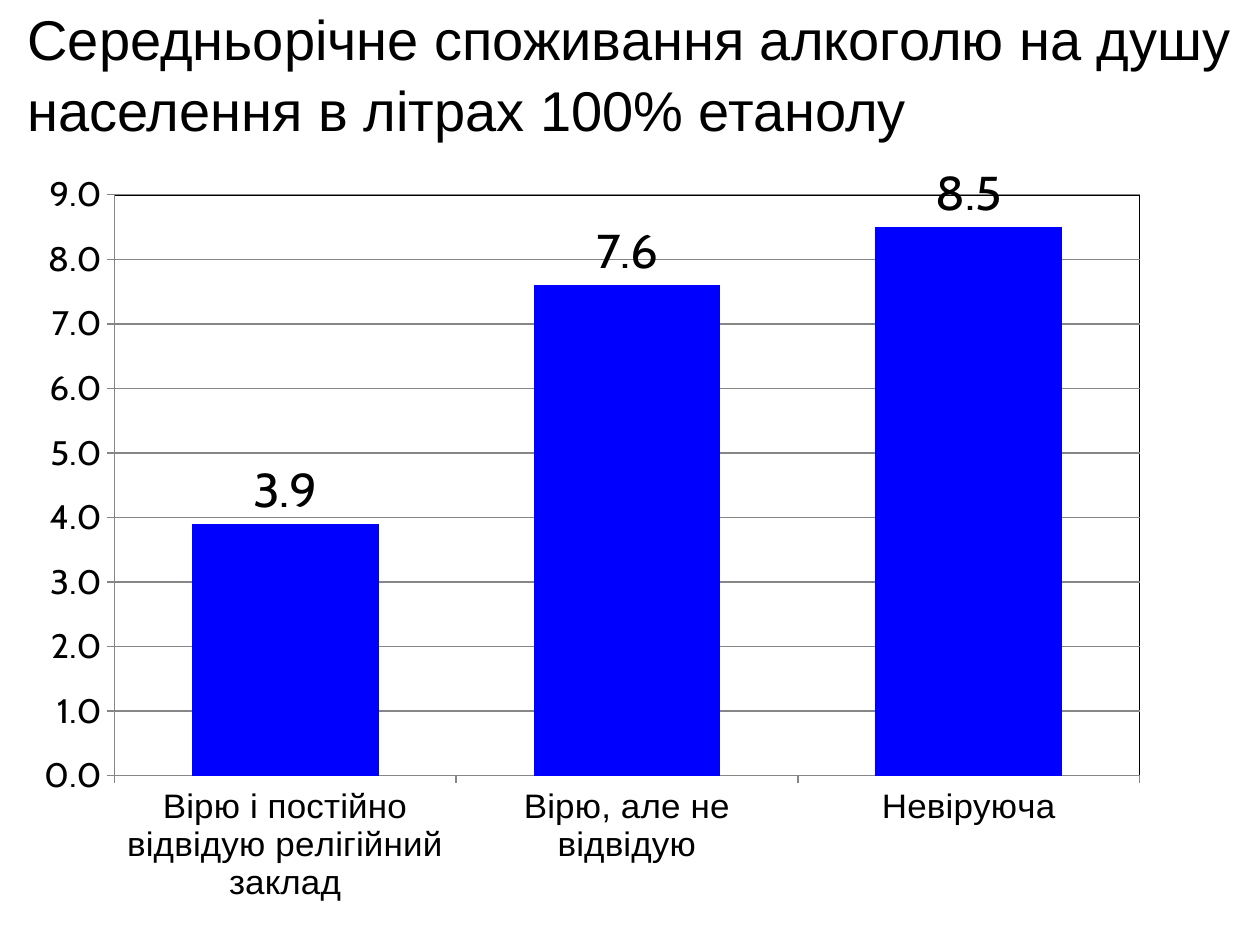
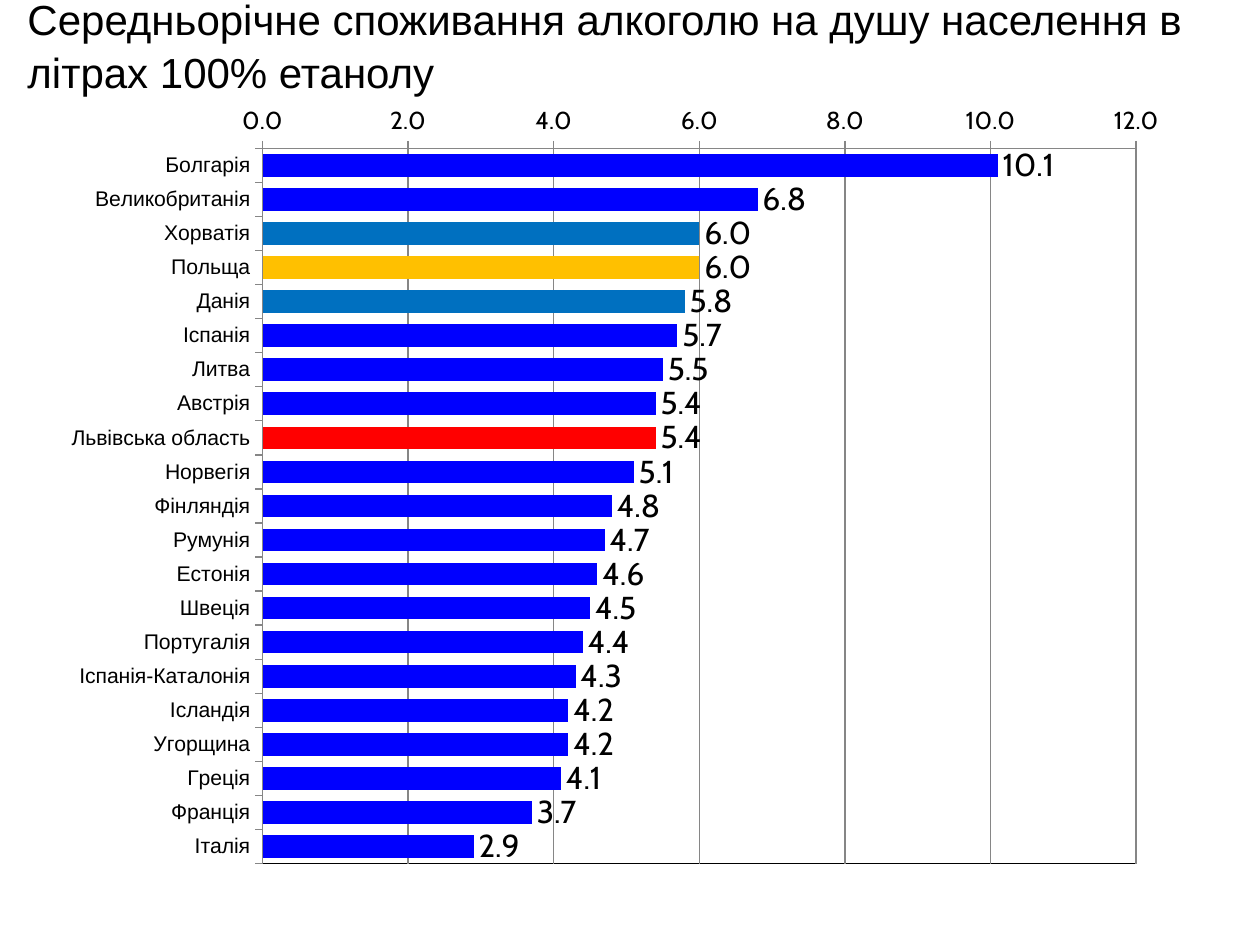
from lxml import etree
from pptx import Presentation
from pptx.chart.data import CategoryChartData
from pptx.dml.color import RGBColor
from pptx.enum.chart import XL_CHART_TYPE as Kind, XL_LABEL_POSITION as Pos, XL_TICK_MARK as Tick
from pptx.enum.text import MSO_ANCHOR as Anchor
from pptx.oxml import parse_xml
from pptx.oxml.ns import nsdecls, qn
from pptx.util import Inches, Pt

TITLE = "Середньорічне споживання алкоголю на душу населення в літрах 100% етанолу"
BLUE, SKY, GOLD, RED = "0000FF", "0070C0", "FFC000", "FF0000"
BLACK, GREY = "000000", "868686"
HEAD, NUM = "Arial", "Cabin"
LEFT, WIDE = 0.35, 9.32

FAITH = [
    ("Вірю і постійно відвідую релігійний заклад", 3.9),
    ("Вірю, але не відвідую", 7.6),
    ("Невіруюча", 8.5),
]
LANDS = [
    ("Болгарія", 10.1), ("Великобританія", 6.8), ("Хорватія", 6.0),
    ("Польща", 6.0), ("Данія", 5.8), ("Іспанія", 5.7), ("Литва", 5.5),
    ("Австрія", 5.4), ("Львівська область", 5.4), ("Норвегія", 5.1),
    ("Фінляндія", 4.8), ("Румунія", 4.7), ("Естонія", 4.6),
    ("Швеція", 4.5), ("Португалія", 4.4), ("Іспанія-Каталонія", 4.3),
    ("Ісландія", 4.2), ("Угорщина", 4.2), ("Греція", 4.1),
    ("Франція", 3.7), ("Італія", 2.9),
]
MARKS = {"Хорватія": SKY, "Польща": GOLD, "Данія": SKY, "Львівська область": RED}

# title: top, height, size; plot: left, top, width, height as shares of the chart
SLIDES = [
    dict(title=(0.06, 1.02, 32), kind=Kind.COLUMN_CLUSTERED, rows=FAITH,
         top=1.31, tall=5.85, plot=(0.059, 0.031, 0.874, 0.813), gap=83,
         top_value=9, step=1, sizes=(20, 20, 28), flip=False),
    dict(title=(0, 0.7, 24), kind=Kind.BAR_CLUSTERED, rows=LANDS,
         top=0.84, tall=6.48, plot=(0.186, 0.049, 0.744, 0.879), gap=51,
         top_value=12, step=2, sizes=(12.1, 14.1, 18.1), flip=True),
]


def paint(color, code):
    color.rgb = RGBColor.from_string(code)


def style(font, size, name):
    font.size, font.name, font.bold = Pt(size), name, False
    paint(font.color, BLACK)


def rule(line):
    line.width = Pt(0.75)
    paint(line.color, GREY)


def add_title(slide, top, tall, size):
    box = slide.shapes.add_textbox(Inches(0.12), Inches(top), Inches(10), Inches(tall))
    frame = box.text_frame
    frame.word_wrap, frame.vertical_anchor = True, Anchor.MIDDLE
    frame.text = TITLE
    par = frame.paragraphs[0]
    par.line_spacing = 1.05
    style(par.runs[0].font, size, HEAD)


def set_plot(chart, shares):
    """Fix the inner plot area and give it a thin black frame."""
    area = chart._chartSpace.find(".//" + qn("c:plotArea"))
    for old in area.findall(qn("c:layout")):
        area.remove(old)
    layout = etree.Element(qn("c:layout"))
    manual = etree.SubElement(layout, qn("c:manualLayout"))
    tags = ("layoutTarget", "xMode", "yMode", "x", "y", "w", "h")
    for tag, val in zip(tags, ("inner", "edge", "edge", *shares)):
        etree.SubElement(manual, qn("c:" + tag)).set("val", str(val))
    area.insert(0, layout)
    area.append(parse_xml(
        f'<c:spPr {nsdecls("c", "a")}><a:noFill/><a:ln w="9525"><a:solidFill>'
        f'<a:srgbClr val="{BLACK}"/></a:solidFill></a:ln></c:spPr>'))


def add_bars(slide, item):
    data = CategoryChartData(number_format="0.0")
    names, vals = zip(*item["rows"])
    data.categories = names
    data.add_series("Series 1", vals)
    chart = slide.shapes.add_chart(
        item["kind"], Inches(LEFT), Inches(item["top"]),
        Inches(WIDE), Inches(item["tall"]), data).chart
    chart.has_legend = chart.has_title = False
    style(chart.font, 18.1, NUM)
    set_plot(chart, item["plot"])

    cat, val = chart.category_axis, chart.value_axis
    cat_size, val_size, label_size = item["sizes"]
    for axis, size, face in ((cat, cat_size, HEAD), (val, val_size, NUM)):
        style(axis.tick_labels.font, size, face)
        axis.major_tick_mark, axis.minor_tick_mark = Tick.OUTSIDE, Tick.NONE
        rule(axis.format.line)
    cat.reverse_order = item["flip"]
    val.minimum_scale, val.maximum_scale = 0, item["top_value"]
    val.major_unit = item["step"]
    val.has_major_gridlines = True
    rule(val.major_gridlines.format.line)
    val.tick_labels.number_format = "0.0"
    val.tick_labels.number_format_is_linked = False

    plot = chart.plots[0]
    plot.gap_width, plot.vary_by_categories = item["gap"], False
    bars = plot.series[0]
    bars.invert_if_negative = False
    bars.format.fill.solid()
    paint(bars.format.fill.fore_color, BLUE)
    for i, name in enumerate(names):
        if name in MARKS:
            fill = bars.points[i].format.fill
            fill.solid()
            paint(fill.fore_color, MARKS[name])
    labels = bars.data_labels
    labels.show_value, labels.position = True, Pos.OUTSIDE_END
    labels.number_format, labels.number_format_is_linked = "0.0", False
    style(labels.font, label_size, NUM)


def main():
    deck = Presentation()
    deck.slide_width, deck.slide_height = Inches(10), Inches(7.5)
    for item in SLIDES:
        slide = deck.slides.add_slide(deck.slide_layouts[6])
        add_title(slide, *item["title"])
        add_bars(slide, item)
    deck.save("out.pptx")


if __name__ == "__main__":
    main()
